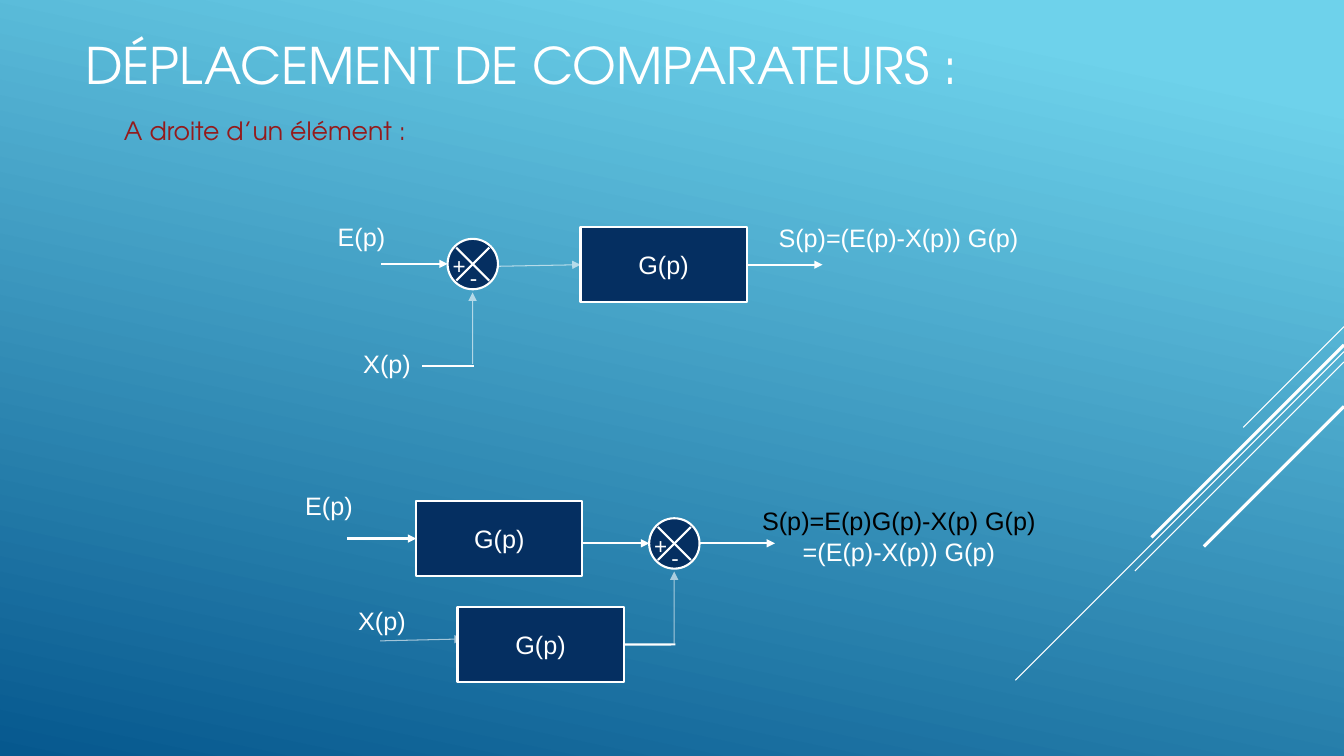
import pptx
import pptx.util
import pptx.dml.color
import pptx.enum.shapes
import pptx.enum.text
import lxml.etree

Cm = pptx.util.Cm
Pt = pptx.util.Pt
RGBColor = pptx.dml.color.RGBColor
Shape = pptx.enum.shapes.MSO_SHAPE
Anchor = pptx.enum.text.MSO_ANCHOR
Align = pptx.enum.text.PP_ALIGN
AutoSize = pptx.enum.text.MSO_AUTO_SIZE

WHITE = RGBColor(0xFF, 0xFF, 0xFF)
BLACK = RGBColor(0x00, 0x00, 0x00)
NAVY = RGBColor(0x05, 0x2F, 0x61)
DARK_RED = RGBColor(0x94, 0x1A, 0x1B)
SKY = RGBColor(0x6E, 0xD2, 0xEB)
DEEP_BLUE = RGBColor(0x06, 0x58, 0x8E)
HEADING_FONT = "TeX Gyre Adventor"
LABEL_FONT = "Arial"
DRAWING_NS = "http://schemas.openxmlformats.org/drawingml/2006/main"

SLIDE_WIDTH, SLIDE_HEIGHT = 33.87, 19.05
BLOCK_WIDTH, BLOCK_HEIGHT = 4.19, 1.9
COMPARATOR_SIZE, CROSS_INSET = 1.27, 0.22

TITLE = "DÉPLACEMENT DE COMPARATEURS :"
SUBTITLE = "A droite d’un élément :"

# Each ray: height at the right edge, horizontal reach, weight
RAYS = [
    (8.23, 2.54, 0.75),
    (8.86, 8.28, 0.75),
    (9.12, 5.27, 0.75),
    (8.69, 4.85, 2.25),
    (10.24, 3.53, 2.25),
]

PLAIN, ARROW, FAINT_ARROW = "plain", "arrow", "faint arrow"
SIGNS = [("-", 0.3, 0.52, 0.71), ("+", -0.13, 0.22, 0.84)]

DIAGRAMS = [
    {
        "blocks": [(14.63, 5.72)],
        "comparator": (11.28, 6.02),
        "signals": [
            ((9.6, 6.65), (11.28, 6.65), ARROW, None, None),
            ((12.55, 6.71), (14.63, 6.67), FAINT_ARROW, None, 0),
            ((18.82, 6.67), (20.73, 6.67), ARROW, 0, None),
            ((11.94, 9.22), (10.64, 9.22), PLAIN, None, None),
            ((11.91, 9.17), (11.91, 7.37), FAINT_ARROW, None, None),
        ],
        "labels": [
            (8.26, 5.44, 1.7, 1.02, [("E(p)", WHITE)]),
            (19.33, 5.49, 6.63, 1.02, [("S(p)=(E(p)-X(p)) G(p)", WHITE)]),
            (8.89, 8.66, 1.73, 1.02, [("X(p)", WHITE)]),
        ],
    },
    {
        "blocks": [(10.49, 12.62), (11.53, 15.29)],
        "comparator": (16.36, 13.06),
        "signals": [
            ((8.74, 13.57), (10.49, 13.57), ARROW, None, 0),
            ((14.68, 13.69), (16.36, 13.69), ARROW, None, None),
            ((17.63, 13.69), (19.53, 13.69), ARROW, None, None),
            ((15.72, 16.24), (17.02, 16.24), PLAIN, 1, None),
            ((16.99, 16.21), (16.99, 14.4), FAINT_ARROW, None, None),
            ((9.58, 16.15), (11.66, 16.1), FAINT_ARROW, None, None),
        ],
        "labels": [
            (7.44, 12.24, 1.7, 1.02, [("E(p)", WHITE)]),
            (18.92, 12.62, 7.47, 3.33,
             [("S(p)=E(p)G(p)-X(p) G(p)", BLACK), ("=(E(p)-X(p)) G(p)", WHITE)]),
            (8.76, 15.14, 1.73, 1.02, [("X(p)", WHITE)]),
        ],
    },
]


def add_run(paragraph, text, size, font_name, color):
    run = paragraph.add_run()
    run.text = text
    run.font.size = Pt(size)
    run.font.name = font_name
    run.font.color.rgb = color


def place(shape, left, top, width, height):
    shape.left, shape.top = Cm(left), Cm(top)
    shape.width, shape.height = Cm(width), Cm(height)


def add_line(shapes, start, end, weight, style=PLAIN):
    connector = shapes.add_connector(
        pptx.enum.shapes.MSO_CONNECTOR.STRAIGHT, *map(Cm, start + end))
    connector.line.color.rgb = WHITE
    connector.line.width = Pt(weight)
    outline = connector.get_or_add_ln()
    if style == FAINT_ARROW:
        color = outline.find(f".//{{{DRAWING_NS}}}srgbClr")
        lxml.etree.SubElement(color, f"{{{DRAWING_NS}}}alpha", val="60000")
    if style != PLAIN:
        lxml.etree.SubElement(outline, f"{{{DRAWING_NS}}}tailEnd", type="triangle")
    lxml.etree.SubElement(connector._element.spPr, f"{{{DRAWING_NS}}}effectLst")
    return connector


def add_solid(shapes, kind, left, top, width, height):
    shape = shapes.add_shape(kind, Cm(left), Cm(top), Cm(width), Cm(height))
    shape.shadow.inherit = False
    shape.fill.solid()
    shape.fill.fore_color.rgb = NAVY
    shape.line.color.rgb = WHITE
    shape.line.width = Pt(1.5)
    return shape


def add_block(shapes, left, top):
    block = add_solid(shapes, Shape.RECTANGLE, left, top, BLOCK_WIDTH, BLOCK_HEIGHT)
    frame = block.text_frame
    frame.word_wrap = False
    frame.vertical_anchor = Anchor.MIDDLE
    frame.paragraphs[0].alignment = Align.CENTER
    add_run(frame.paragraphs[0], "G(p)", 18, LABEL_FONT, WHITE)
    return block


def add_label(shapes, left, top, width, height, lines, size=18):
    frame = shapes.add_textbox(Cm(left), Cm(top), Cm(width), Cm(height)).text_frame
    frame.word_wrap = False
    frame.auto_size = AutoSize.SHAPE_TO_FIT_TEXT
    for index, (text, color) in enumerate(lines):
        paragraph = frame.add_paragraph() if index else frame.paragraphs[0]
        paragraph.alignment = Align.CENTER
        add_run(paragraph, text, size, LABEL_FONT, color)


def add_comparator(shapes, left, top):
    add_solid(shapes, Shape.OVAL, left, top, COMPARATOR_SIZE, COMPARATOR_SIZE)
    near, far = CROSS_INSET, COMPARATOR_SIZE - CROSS_INSET
    for begin, end in ((near, far), (far, near)):
        add_line(shapes, (left + near, top + begin), (left + far, top + end), 1.5)
    for sign, across, down, width in SIGNS:
        add_label(shapes, left + across, top + down, width, 0.94, [(sign, WHITE)], 16)


def add_diagram(slide, diagram):
    shapes = slide.shapes.add_group_shape().shapes
    connectors = [
        add_line(shapes, start, end, 0.75 if style == FAINT_ARROW else 1.5, style)
        for start, end, style, source, target in diagram["signals"]
    ]
    blocks = [add_block(shapes, *position) for position in diagram["blocks"]]
    for connector, signal in zip(connectors, diagram["signals"]):
        source, target = signal[3:]
        if source is not None:
            connector.begin_connect(blocks[source], 3)
        if target is not None:
            connector.end_connect(blocks[target], 1)
    add_comparator(shapes, *diagram["comparator"])
    for label in diagram["labels"]:
        add_label(shapes, *label)


def fill_headings(slide):
    title, body = slide.shapes.title, slide.placeholders[1]
    place(title, 1.9, 0.41, 31.97, 2.11)
    place(body, 2.87, 2.77, 23.7, 1.63)
    title.text_frame.vertical_anchor = Anchor.BOTTOM
    body.text_frame.vertical_anchor = Anchor.TOP
    for shape, text, size, color in ((title, TITLE, 36, WHITE), (body, SUBTITLE, 18, DARK_RED)):
        shape.text_frame.word_wrap = True
        shape.text_frame.auto_size = AutoSize.NONE
        paragraph = shape.text_frame.paragraphs[0]
        properties = paragraph._p.get_or_add_pPr()
        properties.set("marL", "0")
        properties.set("indent", "0")
        lxml.etree.SubElement(properties, f"{{{DRAWING_NS}}}buNone")
        paragraph.alignment = Align.LEFT
        paragraph.space_before = Pt(0)
        add_run(paragraph, text, size, HEADING_FONT, color)


def main():
    presentation = pptx.Presentation()
    presentation.slide_width, presentation.slide_height = Cm(SLIDE_WIDTH), Cm(SLIDE_HEIGHT)
    slide = presentation.slides.add_slide(presentation.slide_layouts[1])
    background = slide.background.fill
    background.gradient()
    background.gradient_angle = 258
    for stop, position, color in zip(background.gradient_stops, (0.1, 1), (SKY, DEEP_BLUE)):
        stop.position = position
        stop.color.rgb = color
    fill_headings(slide)
    for top, reach, weight in RAYS:
        add_line(slide.shapes, (SLIDE_WIDTH, top), (SLIDE_WIDTH - reach, top + reach), weight)
    for diagram in DIAGRAMS:
        add_diagram(slide, diagram)
    presentation.save("out.pptx")


if __name__ == "__main__":
    main()
